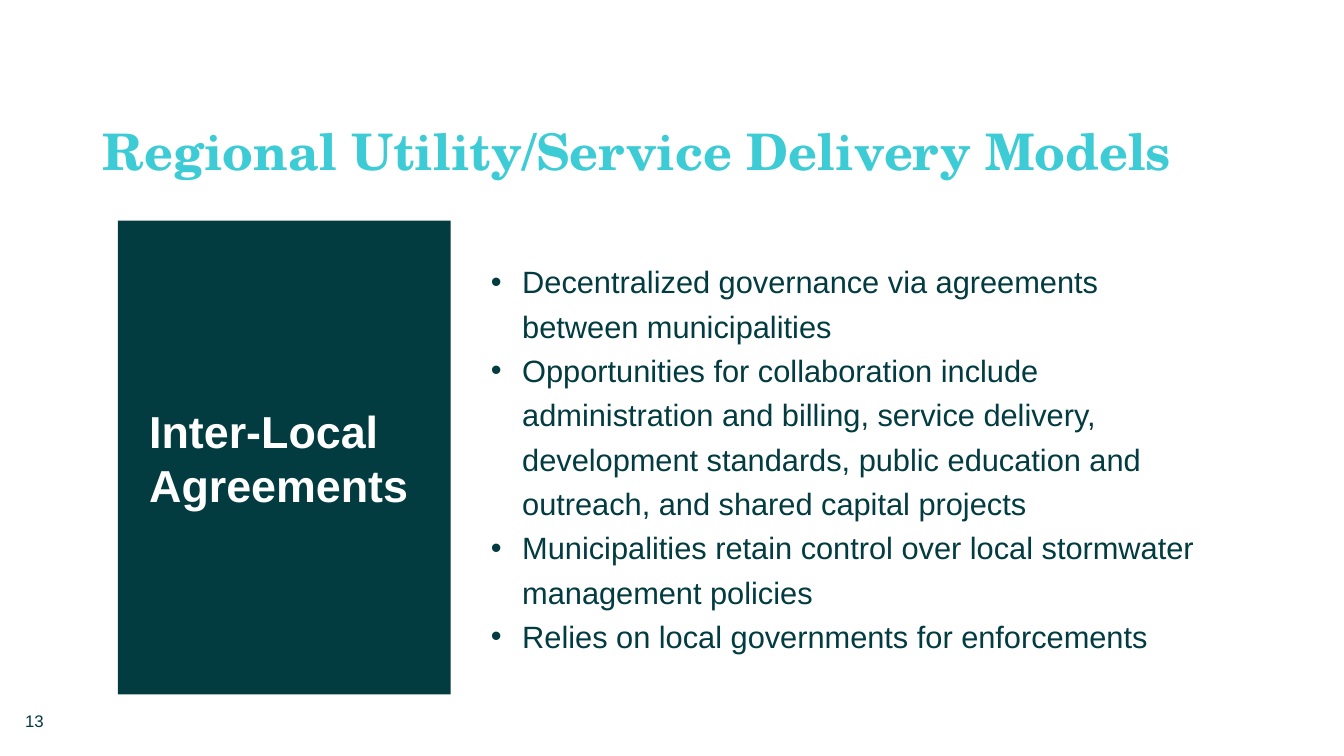
from dataclasses import dataclass

import pptx
import pptx.dml.color
import pptx.enum.shapes
import pptx.enum.text
import pptx.oxml
import pptx.oxml.ns
import pptx.util
from pptx.util import Inches

ANCHOR = pptx.enum.text.MSO_ANCHOR


@dataclass(frozen=True)
class Theme:
    teal: str = "023B40"
    aqua: str = "3DCCD5"
    white: str = "FFFFFF"
    body_font: str = "Arial"
    title_font: str = "TeX Gyre Schola"
    title_size: int = 36
    label_size: int = 32
    body_size: int = 22
    number_size: int = 12


def rgb(value):
    return pptx.dml.color.RGBColor.from_string(value)


def add_bullet(paragraph, indent):
    properties = paragraph._p.get_or_add_pPr()
    properties.set("marL", str(indent))
    properties.set("indent", str(-indent))
    namespace = pptx.oxml.ns.nsdecls("a")
    properties.append(pptx.oxml.parse_xml(f'<a:buFont {namespace} typeface="Arial"/>'))
    properties.append(pptx.oxml.parse_xml(f'<a:buChar {namespace} char="•"/>'))


def write_text(shape, paragraphs, *, size, color, font, bold=False, spacing=1.0,
               anchor=ANCHOR.MIDDLE, insets=(0.1, 0.05, 0.1, 0.05), bullet_indent=None):
    frame = shape.text_frame
    frame.word_wrap = True
    frame.auto_size = pptx.enum.text.MSO_AUTO_SIZE.NONE
    frame.vertical_anchor = anchor
    (frame.margin_left, frame.margin_top,
     frame.margin_right, frame.margin_bottom) = map(Inches, insets)
    frame.text = "\n".join(paragraphs)
    for paragraph in frame.paragraphs:
        paragraph.alignment = pptx.enum.text.PP_ALIGN.LEFT
        paragraph.line_spacing = spacing
        if bullet_indent:
            add_bullet(paragraph, Inches(bullet_indent))
        for run in paragraph.runs:
            run.font.size = pptx.util.Pt(size)
            run.font.name = font
            run.font.bold = bold
            run.font.color.rgb = rgb(color)


class SlideBuilder:
    def __init__(self, slide, theme):
        self.slide = slide
        self.theme = theme

    def title(self, text, left, top, width, height):
        title = self.slide.shapes.title
        title.left, title.top, title.width, title.height = map(
            Inches, (left, top, width, height))
        write_text(title, [text], size=self.theme.title_size, color=self.theme.aqua,
                   font=self.theme.title_font, bold=True, spacing=0.9,
                   anchor=ANCHOR.BOTTOM)

    def panel(self, paragraphs, left, top, width, height, fill, **text_format):
        panel = self.slide.shapes.add_shape(
            pptx.enum.shapes.MSO_SHAPE.RECTANGLE,
            *map(Inches, (left, top, width, height)))
        panel.shadow.inherit = False
        panel.fill.solid()
        panel.fill.fore_color.rgb = rgb(fill)
        panel.line.fill.background()
        write_text(panel, paragraphs, font=self.theme.body_font, **text_format)

    def page_number(self, text, left, top, width, height):
        number = self.slide.shapes.add_textbox(*map(Inches, (left, top, width, height)))
        write_text(number, [text], size=self.theme.number_size, color=self.theme.teal,
                   font=self.theme.body_font)


def main():
    theme = Theme()
    deck = pptx.Presentation()
    deck.slide_width, deck.slide_height = Inches(13.33), Inches(7.5)
    builder = SlideBuilder(deck.slides.add_slide(deck.slide_layouts[5]), theme)

    # Heading
    builder.title("Regional Utility/Service Delivery Models", 0.92, 0.4, 11.5, 1.45)

    # Description, with the model label over its left part
    model_left, model_top, model_height = 1.17, 2.19, 4.7
    description = [
        "Decentralized governance via agreements between municipalities",
        "Opportunities for collaboration include administration and billing, "
        "service delivery, development standards, public education and outreach, "
        "and shared capital projects",
        "Municipalities retain control over local stormwater management policies",
        "Relies on local governments for enforcements",
    ]
    builder.panel(description, model_left, model_top, 11, model_height, theme.white,
                  size=theme.body_size, color=theme.teal, spacing=1.2,
                  insets=(3.7, 0, 0.2, 0.05), bullet_indent=0.31)
    builder.panel(["Inter-Local Agreements"], model_left, model_top, 3.3, model_height,
                  theme.teal, size=theme.label_size, color=theme.white, bold=True,
                  insets=(0.31, 0.05, 0.1, 0.05))

    # Footer
    builder.page_number("13", 0.15, 6.95, 3, 0.4)

    deck.save("out.pptx")


if __name__ == "__main__":
    main()
